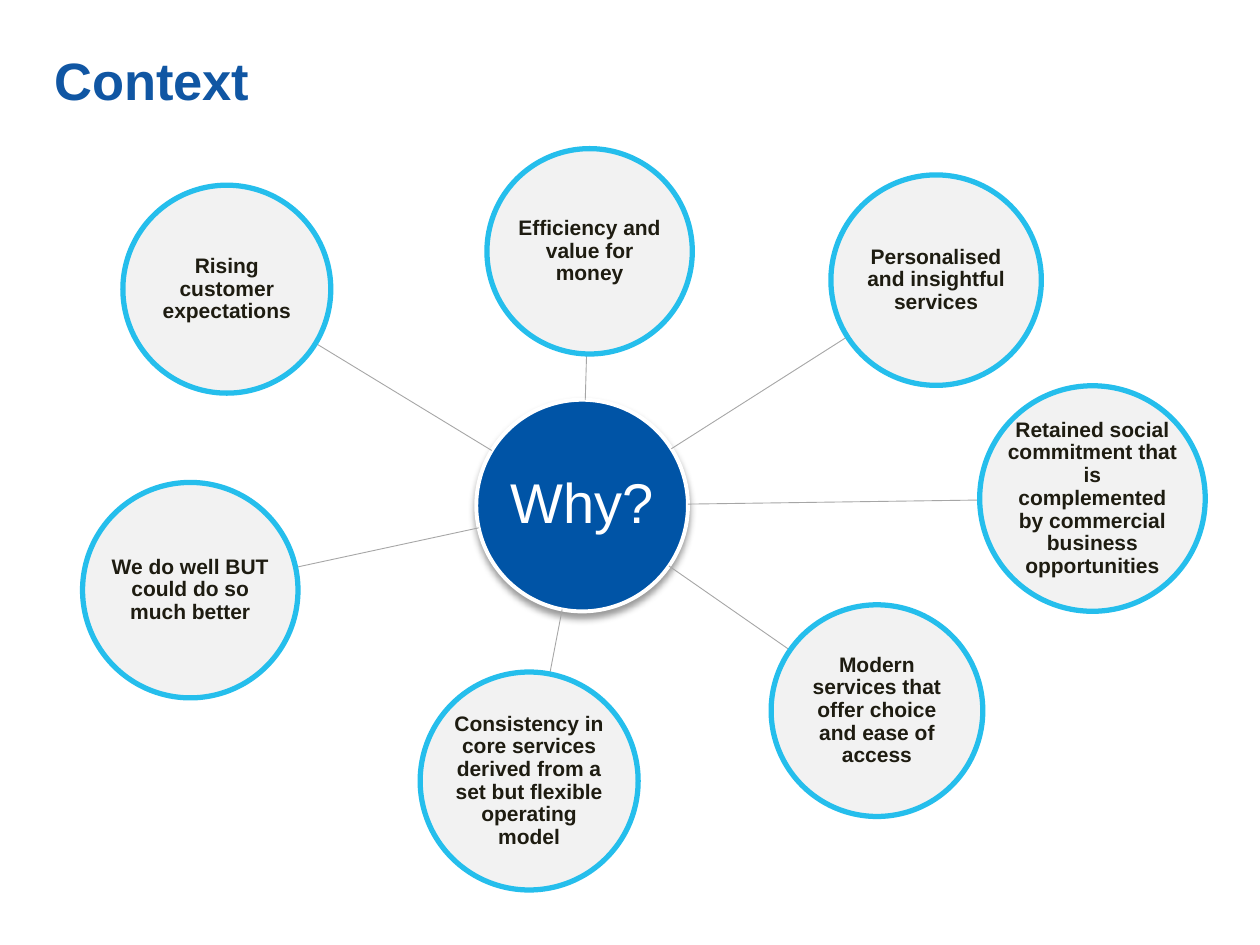
import math
import lxml.etree
import pptx
import pptx.dml.color
import pptx.enum.shapes
import pptx.enum.text
import pptx.oxml
import pptx.oxml.ns
import pptx.util

WIDTH, HEIGHT = 10, 7.5
FONT = "Arial"
OVAL_TEXT_INSET = (1 - math.sqrt(0.5)) / 2
COLORS = {
    "title": "1056A3",
    "hub": "0054A6",
    "white": "FFFFFF",
    "reason": "F2F2F2",
    "ring": "25BEEC",
    "text": "1E1C11",
    "spoke": "A6A6A6",
}

# Centre across, centre down and diameter, in percent of slide width, height and width
HUB = (46.2, 53.5, 16.8)
REASONS = [
    ("Efficiency and value for money", (46.8, 26.6, 16.3)),
    ("Retained social commitment that is complemented by commercial "
     "business opportunities", (86.7, 52.75, 17.9)),
    ("Modern services that offer choice and ease of access", (69.6, 75.2, 16.8)),
    ("Consistency in core services derived from a set but flexible "
     "operating model", (42, 82.65, 17.3)),
    ("We do well BUT could do so much better", (15.1, 62.45, 17.1)),
    ("Rising customer expectations", (18, 30.6, 16.5)),
    ("Personalised and insightful services", (74.3, 29.65, 16.7)),
]


def color(name):
    return pptx.dml.color.RGBColor.from_string(COLORS[name])


def inches(*lengths):
    return [pptx.util.Inches(length) for length in lengths]


def circle_geometry(shares):
    across, down, diameter = shares
    return across * WIDTH / 100, down * HEIGHT / 100, diameter * WIDTH / 100


def format_text(para, size, color_name, bold):
    for span in para.runs:
        span.font.name = FONT
        span.font.size = pptx.util.Pt(size)
        span.font.bold = bold
        span.font.color.rgb = color(color_name)


def set_margins(frame, left, top, right, bottom):
    frame.margin_left, frame.margin_top, frame.margin_right, frame.margin_bottom = inches(
        left, top, right, bottom)


def add_title(page, text):
    title = page.shapes.title
    title.left, title.top, title.width, title.height = inches(
        0.033 * WIDTH, 0.039 * HEIGHT, 0.861 * WIDTH, 0.073 * HEIGHT)
    frame = title.text_frame
    frame.text = text
    frame.vertical_anchor = pptx.enum.text.MSO_ANCHOR.TOP
    set_margins(frame, 0.1, 0.09, 0.1, 0)
    frame.paragraphs[0].alignment = pptx.enum.text.PP_ALIGN.LEFT
    format_text(frame.paragraphs[0], 30, "title", True)


def add_circle(page, text, shares, fill, line, line_width, padding, size, text_color, bold):
    x, y, diameter = circle_geometry(shares)
    circle = page.shapes.add_shape(
        pptx.enum.shapes.MSO_SHAPE.OVAL,
        *inches(x - diameter / 2, y - diameter / 2, diameter, diameter))
    circle.shadow.inherit = False
    circle.fill.solid()
    circle.fill.fore_color.rgb = color(fill)
    circle.line.color.rgb = color(line)
    circle.line.width = pptx.util.Pt(line_width)
    frame = circle.text_frame
    frame.word_wrap = True
    frame.vertical_anchor = pptx.enum.text.MSO_ANCHOR.MIDDLE
    set_margins(frame, *[padding - OVAL_TEXT_INSET * diameter] * 4)
    frame.text = text
    para = frame.paragraphs[0]
    para.alignment = pptx.enum.text.PP_ALIGN.CENTER
    para.line_spacing = 0.9
    format_text(para, size, text_color, bold)
    return circle


def add_drop_shadow(shape):
    effects = shape._element.spPr.find(pptx.oxml.ns.qn("a:effectLst"))
    effects.append(pptx.oxml.parse_xml(
        f'<a:outerShdw {pptx.oxml.ns.nsdecls("a")} blurRad="{pptx.util.Pt(4)}" '
        f'dist="{pptx.util.Pt(3)}" dir="5400000" rotWithShape="0">'
        '<a:srgbClr val="000000"><a:alpha val="40000"/></a:srgbClr></a:outerShdw>'))


def add_spoke(page, hub, reason):
    hub_x, hub_y, hub_diameter = circle_geometry(hub)
    x, y, diameter = circle_geometry(reason)
    angle = math.atan2(y - hub_y, x - hub_x)
    across, down = math.cos(angle) / 2, math.sin(angle) / 2
    spoke = page.shapes.add_connector(
        pptx.enum.shapes.MSO_CONNECTOR.STRAIGHT,
        *inches(hub_x + hub_diameter * across, hub_y + hub_diameter * down,
                x - diameter * across, y - diameter * down))
    spoke.line.color.rgb = color("spoke")
    spoke.line.width = pptx.util.Pt(0.5)
    lxml.etree.SubElement(spoke._element.spPr, pptx.oxml.ns.qn("a:effectLst"))


def main():
    deck = pptx.Presentation()
    deck.slide_width, deck.slide_height = inches(WIDTH, HEIGHT)
    page = deck.slides.add_slide(deck.slide_layouts[5])
    add_title(page, "Context")
    hub = add_circle(page, "Why?", HUB, "hub", "white", 2.25, 0.27, 32, "white", False)
    add_drop_shadow(hub)
    for text, shares in REASONS:
        add_spoke(page, HUB, shares)
        add_circle(page, text, shares, "reason", "ring", 3, 0.22, 12, "text", True)
    deck.save("out.pptx")


if __name__ == "__main__":
    main()
